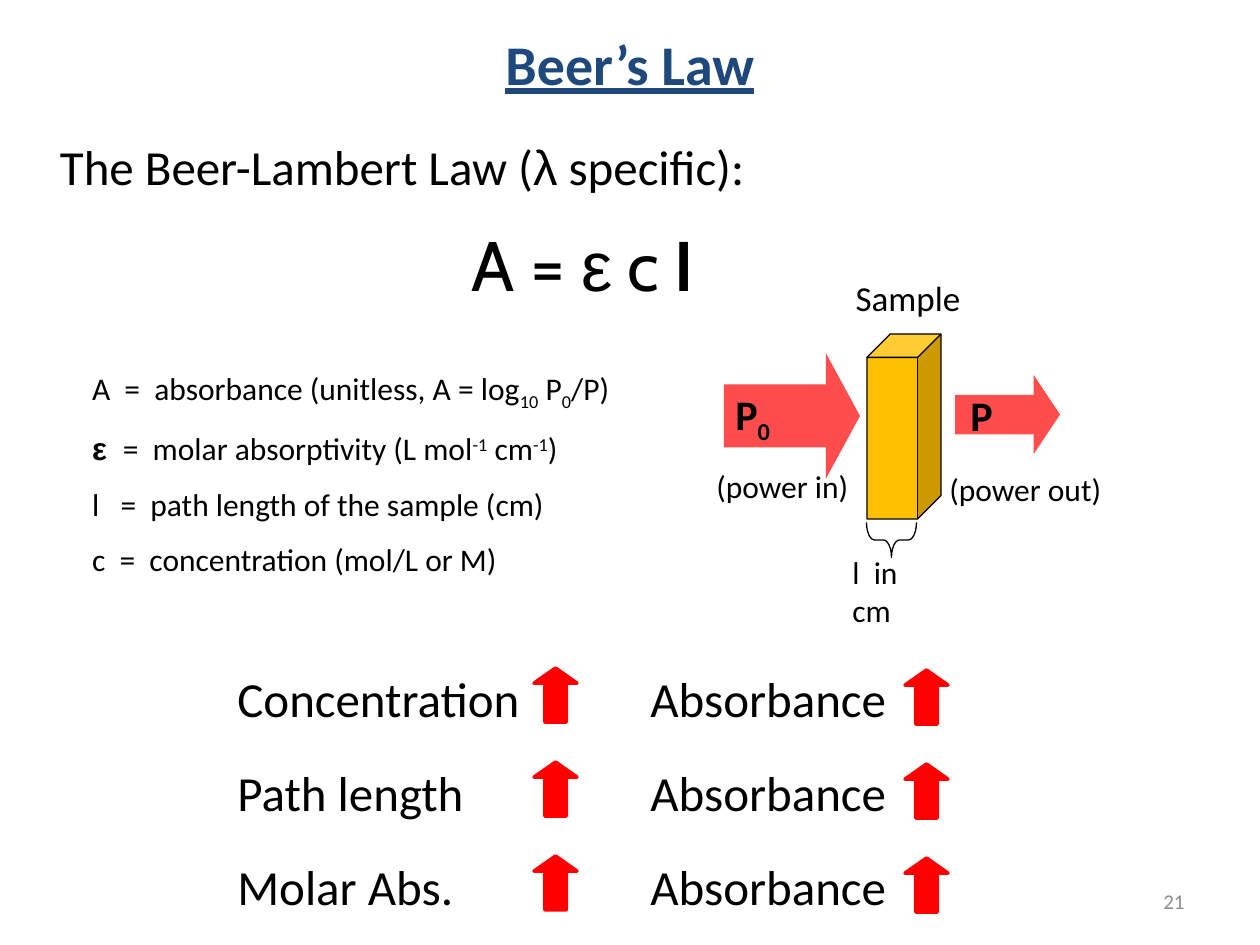
from dataclasses import dataclass

import pptx
import pptx.dml.color
import pptx.enum.shapes
import pptx.enum.text
import pptx.oxml.ns
import pptx.util
from lxml import etree

PX_PER_INCH = 126
COLORS = {
    "text": "000000",
    "title": "1F497D",
    "number": "8C8C8C",
    "arrow": "FF0000",
    "sample": "FFC000",
}
SHAPES = pptx.enum.shapes.MSO_SHAPE
ALIGN = pptx.enum.text.PP_ALIGN
ANCHOR = pptx.enum.text.MSO_ANCHOR


@dataclass(frozen=True)
class Box:
    left: int
    top: int
    width: int
    height: int


@dataclass(frozen=True)
class Run:
    text: str
    font: str = "Calibri"
    bold: bool = False
    underline: bool = False
    baseline: int = 0


@dataclass(frozen=True)
class Label:
    box: Box
    paragraphs: tuple[tuple[Run, ...], ...]
    size: int
    color: str = "text"
    align: ALIGN = ALIGN.LEFT
    anchor: ANCHOR = ANCHOR.TOP
    wrap: bool = True
    inset: bool = True
    margin: int = 0
    indent: int = 0
    before: float = 0
    after: float = 0


@dataclass(frozen=True)
class Figure:
    box: Box
    kind: SHAPES
    adjustments: tuple[float, ...]
    fill: str | None = None
    opacity: int = 100
    line: str | None = None
    line_width: float = 0
    rotation: int = 0


def px(length: int) -> int:
    return round(length * pptx.util.Inches(1) / PX_PER_INCH)


def rgb(name: str) -> pptx.dml.color.RGBColor:
    return pptx.dml.color.RGBColor.from_string(COLORS[name])


def place(box: Box) -> tuple[int, int, int, int]:
    return px(box.left), px(box.top), px(box.width), px(box.height)


def draw_label(slide: pptx.slide.Slide, label: Label) -> None:
    text_frame = slide.shapes.add_textbox(*place(label.box)).text_frame
    text_frame.word_wrap = label.wrap
    text_frame.vertical_anchor = label.anchor
    if not label.inset:
        text_frame.margin_left = text_frame.margin_right = 0
        text_frame.margin_top = text_frame.margin_bottom = 0
    for index, runs in enumerate(label.paragraphs):
        paragraph = text_frame.add_paragraph() if index else text_frame.paragraphs[0]
        paragraph.alignment = label.align
        paragraph.space_before = pptx.util.Pt(label.before)
        paragraph.space_after = pptx.util.Pt(label.after)
        properties = paragraph._p.get_or_add_pPr()
        properties.set("marL", str(px(label.margin)))
        properties.set("indent", str(px(label.indent)))
        for part in runs:
            run = paragraph.add_run()
            run.text = part.text
            run.font.name = part.font
            run.font.size = pptx.util.Pt(label.size)
            run.font.bold = part.bold
            run.font.underline = part.underline
            run.font.color.rgb = rgb(label.color)
            if part.baseline:
                run._r.get_or_add_rPr().set("baseline", str(part.baseline * 1000))


def draw_figure(slide: pptx.slide.Slide, figure: Figure) -> None:
    shape = slide.shapes.add_shape(figure.kind, *place(figure.box))
    shape.shadow.inherit = False
    shape.rotation = figure.rotation
    for index, value in enumerate(figure.adjustments):
        shape.adjustments[index] = value
    if figure.fill:
        shape.fill.solid()
        shape.fill.fore_color.rgb = rgb(figure.fill)
        if figure.opacity < 100:
            color = shape._element.spPr.find(".//" + pptx.oxml.ns.qn("a:srgbClr"))
            alpha = etree.SubElement(color, pptx.oxml.ns.qn("a:alpha"))
            alpha.set("val", str(figure.opacity * 1000))
    else:
        shape.fill.background()
    if figure.line:
        shape.line.color.rgb = rgb(figure.line)
        shape.line.width = pptx.util.Pt(figure.line_width)
    else:
        shape.line.fill.background()


def draw_trend(slide: pptx.slide.Slide, text: str, left: int, top: int,
               width: int, arrow_left: int, arrow_top: int) -> None:
    """Draw a quantity with its rising arrow."""
    draw_label(slide, Label(Box(left, top, width, 72), ((Run(text),),), 28))
    draw_figure(slide, Figure(Box(arrow_left, arrow_top, 43, 54), SHAPES.DOWN_ARROW,
                              (0.5, 0.351), "arrow", line="arrow", line_width=2,
                              rotation=180))


DEFINITIONS = (
    (Run("A  =  absorbance (unitless, A = log"), Run("10", baseline=-25),
     Run(" P"), Run("0", baseline=-25), Run("/P)")),
    (Run("ε ", "Arial", bold=True), Run(" =  molar absorptivity (L mol"),
     Run("-1", baseline=30), Run(" cm"), Run("-1", baseline=30), Run(")")),
    (Run("l   =  path length of the sample (cm)"),),
    (Run("c  =  concentration (mol/L or M)"),),
)
EQUATION = (Run("A = ", "Cabin"), Run("ε", "Arial"), Run(" c ", "Cabin"),
            Run("l", bold=True))
FIGURES = (
    Figure(Box(724, 353, 136, 126), SHAPES.RIGHT_ARROW, (0.5, 0.271), "arrow", 70),
    Figure(Box(955, 375, 105, 79), SHAPES.RIGHT_ARROW, (0.5, 0.333), "arrow", 70),
    Figure(Box(867, 334, 74, 185), SHAPES.CUBE, (0.316,), "sample", line="text"),
    Figure(Box(874, 515, 35, 50), SHAPES.LEFT_BRACE, (0.231, 0.5), line="text",
           line_width=0.75, rotation=270),
)
LABELS = (
    Label(Box(63, 0, 1134, 126), ((Run("Beer’s Law", bold=True, underline=True),),),
          32, "title", ALIGN.CENTER, ANCHOR.MIDDLE),
    Label(Box(60, 136, 1134, 71),
          ((Run("The Beer-Lambert Law ("), Run("λ", "Arial"), Run(" specific):")),),
          28, inset=False, margin=48, indent=-48, before=5.6),
    Label(Box(459, 215, 310, 97), (EQUATION,), 40),
    Label(Box(29, 369, 636, 228), DEFINITIONS, 18, inset=False,
          margin=102, indent=-39, after=10),
    Label(Box(825, 270, 166, 55), ((Run("Sample"),),), 20, align=ALIGN.CENTER),
    Label(Box(723, 382, 62, 97),
          ((Run("P", bold=True), Run("0", bold=True, baseline=-25)),), 24, wrap=False),
    Label(Box(958, 383, 48, 97), ((Run("P", bold=True),),), 24, wrap=False),
    Label(Box(704, 461, 159, 50), ((Run("(power in)"),),), 18, wrap=False),
    Label(Box(937, 464, 179, 50), ((Run("(power out)"),),), 18, wrap=False),
    Label(Box(840, 547, 92, 88), ((Run("l  in cm"),),), 18),
    Label(Box(903, 876, 294, 50), ((Run("21"),),), 12, "number", ALIGN.RIGHT,
          ANCHOR.MIDDLE),
)
QUANTITIES = ("Concentration", "Path length", "Molar Abs.")
TREND_TOP, TREND_PITCH = 662, 94


def main() -> None:
    presentation = pptx.Presentation()
    presentation.slide_width = px(1260)
    presentation.slide_height = px(945)
    slide = presentation.slides.add_slide(presentation.slide_layouts[6])
    for figure in FIGURES:
        draw_figure(slide, figure)
    for label in LABELS:
        draw_label(slide, label)
    for row, quantity in enumerate(QUANTITIES):
        top = TREND_TOP + row * TREND_PITCH
        draw_trend(slide, quantity, 225, top, 335, 534, top + 6)
        draw_trend(slide, "Absorbance", 638, top, 281, 905, top + 8)
    presentation.save("out.pptx")


if __name__ == "__main__":
    main()
